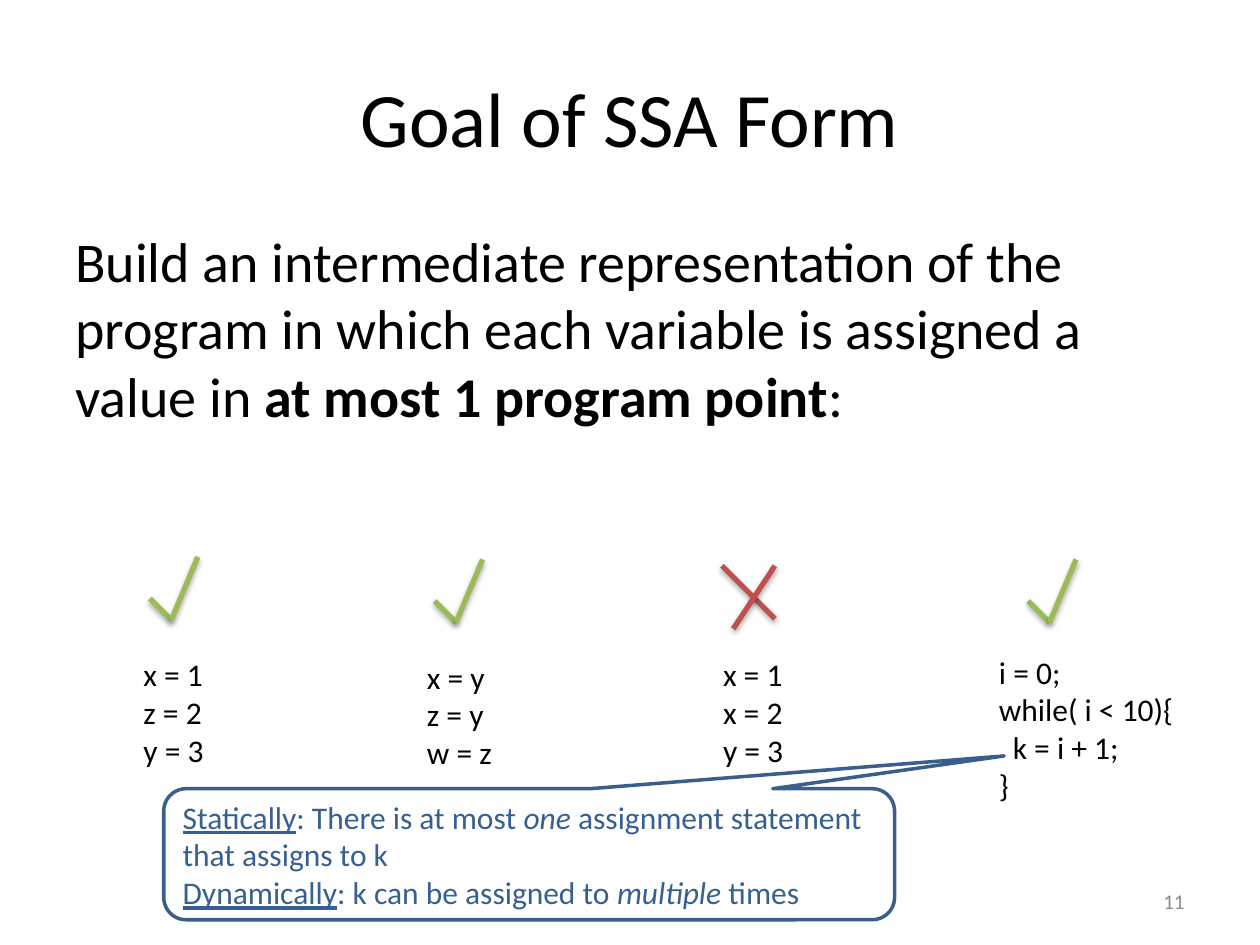
from dataclasses import dataclass

from lxml import etree
from pptx import Presentation
from pptx.dml.color import RGBColor
from pptx.enum.shapes import MSO_CONNECTOR, MSO_SHAPE
from pptx.enum.text import MSO_ANCHOR, PP_ALIGN
from pptx.oxml.ns import qn
from pptx.util import Inches, Pt

LEFT, CENTER, RIGHT = PP_ALIGN.LEFT, PP_ALIGN.CENTER, PP_ALIGN.RIGHT
TOP, MIDDLE = MSO_ANCHOR.TOP, MSO_ANCHOR.MIDDLE
STRAIGHT = MSO_CONNECTOR.STRAIGHT
CALLOUT = MSO_SHAPE.ROUNDED_RECTANGULAR_CALLOUT


@dataclass(frozen=True)
class Theme:
    font: str = "Calibri"
    black: RGBColor = RGBColor(0x00, 0x00, 0x00)
    white: RGBColor = RGBColor(0xFF, 0xFF, 0xFF)
    gray: RGBColor = RGBColor(0x8B, 0x8B, 0x8B)
    green: RGBColor = RGBColor(0x9B, 0xBB, 0x59)
    red: RGBColor = RGBColor(0xC0, 0x50, 0x4D)
    callout_line: RGBColor = RGBColor(0x3A, 0x5F, 0x8B)
    callout_text: RGBColor = RGBColor(0x37, 0x60, 0x92)
    title_size: Pt = Pt(44)
    body_size: Pt = Pt(32)
    code_size: Pt = Pt(18)
    number_size: Pt = Pt(12)


theme = Theme()


def write_text(shape, lines, size, color, align=LEFT, anchor=TOP):
    """Fill a shape; each line is a list of (text, font attribute to switch on)."""
    frame = shape.text_frame
    frame.word_wrap = True
    frame.vertical_anchor = anchor
    for index, line in enumerate(lines):
        paragraph = frame.paragraphs[0] if index == 0 else frame.add_paragraph()
        paragraph.alignment = align
        paragraph.font.name = theme.font
        paragraph.font.size = size
        paragraph.font.color.rgb = color
        for text, emphasis in line:
            run = paragraph.add_run()
            run.text = text
            if emphasis:
                setattr(run.font, emphasis, True)


def add_stroke(slide, start, end, color):
    """Draw one thick mark stroke with a soft shadow below it."""
    stroke = slide.shapes.add_connector(STRAIGHT, *map(Inches, start + end))
    stroke.line.color.rgb = color
    stroke.line.width = Pt(3)
    effects = etree.SubElement(stroke._element.spPr, qn("a:effectLst"))
    shadow = etree.SubElement(effects, qn("a:outerShdw"), blurRad="40000",
                              dist="23000", dir="5400000", rotWithShape="0")
    shade = etree.SubElement(shadow, qn("a:srgbClr"), val="000000")
    etree.SubElement(shade, qn("a:alpha"), val="35000")


presentation = Presentation()
presentation.slide_width = Inches(10)
presentation.slide_height = Inches(7.5)
slide = presentation.slides.add_slide(presentation.slide_layouts[5])

# Title
title = slide.shapes.title
title.left, title.top = Inches(0.5), Inches(0.3)
title.width, title.height = Inches(9), Inches(1.25)
write_text(title, [[("Goal of SSA Form", None)]], theme.title_size, theme.black,
           CENTER, MIDDLE)

# Goal statement
goal = slide.shapes.add_textbox(Inches(0.5), Inches(1.75), Inches(9), Inches(4.95))
goal_line = [
    ("Build an intermediate representation of the program in which each "
     "variable is assigned a value in ", None),
    ("at most 1 program point", "bold"),
    (":", None),
]
write_text(goal, [goal_line], theme.body_size, theme.black)
goal.text_frame.paragraphs[0].space_before = Pt(6.4)

# Code examples: left, top, width, height, lines
examples = [
    (1.04, 5.15, 1.08, 1, ["x = 1", "z = 2", "y = 3"]),
    (3.29, 5.17, 1.08, 1, ["x = y", "z = y", "w = z"]),
    (5.64, 5.15, 0.97, 1, ["x = 1", "x = 2", "y = 3"]),
    (7.83, 5.13, 1.92, 1.3, ["i = 0;", "while( i < 10){", "k = i + 1;", "}"]),
]
for left, top, width, height, code in examples:
    code_box = slide.shapes.add_textbox(Inches(left), Inches(top),
                                        Inches(width), Inches(height))
    write_text(code_box, [[(line, None)] for line in code],
               theme.code_size, theme.black)

# Indent the loop body of the last example
loop_body = code_box.text_frame.paragraphs[2]
loop_body._p.get_or_add_pPr().set("marL", str(Inches(0.11)))

# Check marks, placed by their lowest point
for x, y in [(1.36, 4.92), (3.62, 4.94), (8.33, 4.94)]:
    add_stroke(slide, (x - 0.17, y - 0.17), (x, y), theme.green)
    add_stroke(slide, (x, y), (x + 0.21, y - 0.5), theme.green)

# Cross over the invalid example
add_stroke(slide, (5.73, 4.49), (6.15, 4.91), theme.red)
add_stroke(slide, (6.15, 4.49), (5.82, 4.99), theme.red)

# Callout pointing at the loop body
callout = slide.shapes.add_shape(CALLOUT, Inches(1.3), Inches(6.26),
                                 Inches(5.8), Inches(1.04))
callout.shadow.inherit = False
callout.fill.solid()
callout.fill.fore_color.rgb = theme.white
callout.line.color.rgb = theme.callout_line
callout.line.width = Pt(2)
for index, value in enumerate((0.65, -0.75, 0.17)):
    callout.adjustments[index] = value
callout_lines = [
    [("Statically", "underline"), (": There is at most ", None), ("one", "italic"),
     (" assignment statement that assigns to k", None)],
    [("Dynamically", "underline"), (": k can be assigned to ", None),
     ("multiple", "italic"), (" times", None)],
]
write_text(callout, callout_lines, theme.code_size, theme.callout_text, LEFT, MIDDLE)

# Slide number
number = slide.shapes.add_textbox(Inches(7.17), Inches(6.95), Inches(2.33), Inches(0.4))
write_text(number, [[("11", None)]], theme.number_size, theme.gray, RIGHT, MIDDLE)

presentation.save("out.pptx")
